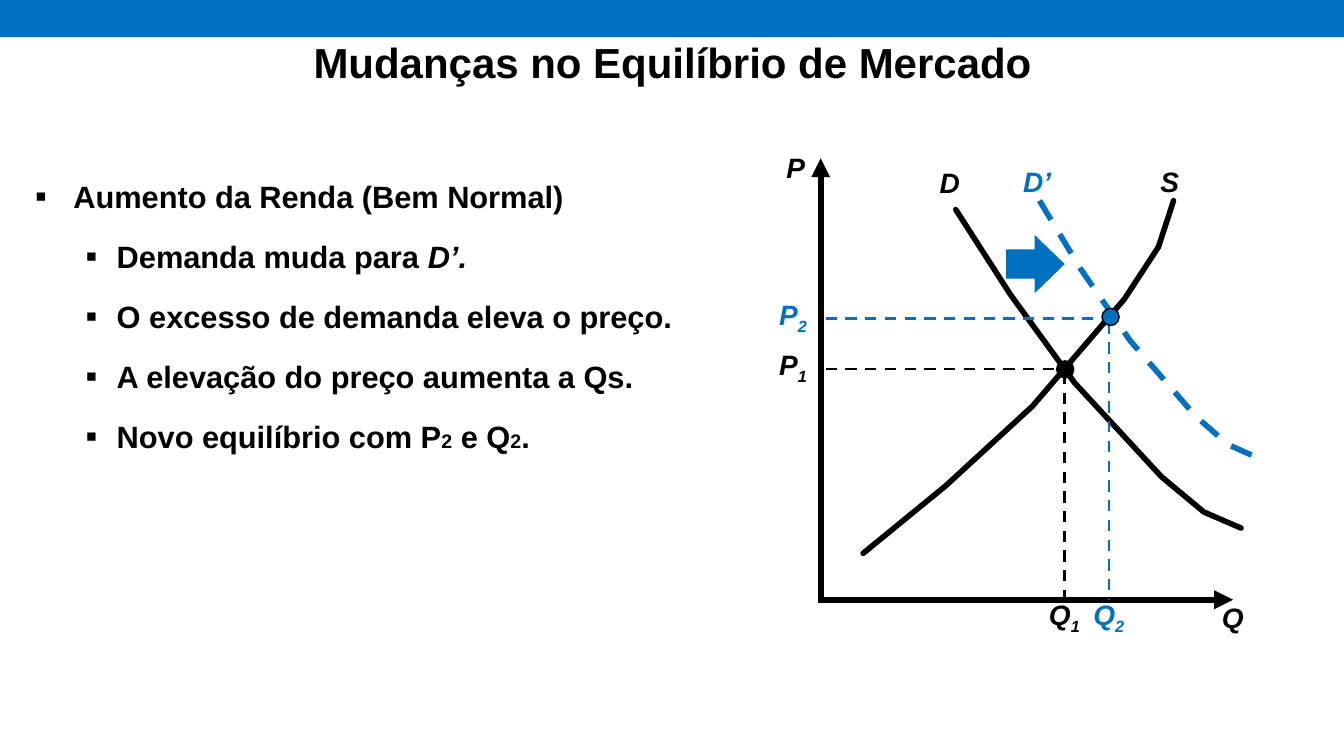
from dataclasses import dataclass

from lxml import etree
from pptx import Presentation
from pptx import util as u
from pptx.dml.color import RGBColor
from pptx.enum import dml, shapes, text
from pptx.oxml import ns


@dataclass(frozen=True)
class Theme:
    """Colours, font and type sizes of the slide."""
    ink: RGBColor = RGBColor(0, 0, 0)
    accent: RGBColor = RGBColor(0x00, 0x70, 0xC0)
    font: str = "Arial"
    title: int = 30
    body: int = 22
    index: int = 14
    label: int = 20


THEME = Theme()
COLUMNS, ROWS = 133.3, 75
MODULE = u.Inches(0.1)

DEMAND = [(18.8, 6.8), (24.2, 15.2), (30.6, 24), (39.2, 33.3), (43.4, 36.8), (47.1, 38.4)]
NEW_DEMAND = [(27.1, 5.9), (31.2, 12.7), (36.1, 19.8), (42.6, 27.3), (45.8, 30.1), (48.7, 31.4)]
SUPPLY = [(9.6, 40.9), (17.8, 34.2), (26.4, 26.3), (35.5, 15.7), (38.9, 10.5), (40.4, 5.9)]

BULLETS = [
    (0, [("Aumento da Renda (Bem Normal)", {})]),
    (1, [("Demanda muda para ", {}), ("D’.", {"italic": True})]),
    (1, [("O excesso de demanda eleva o preço.", {})]),
    (1, [("A elevação do preço aumenta a Qs.", {})]),
    (1, [("Novo equilíbrio com P", {}), ("2", {"size": THEME.index}), (" e Q", {}),
         ("2", {"size": THEME.index}), (".", {})]),
]


def grid(*lengths):
    """Turn grid modules into slide lengths."""
    return [u.Emu(round(length * MODULE)) for length in lengths]


def element(parent, tag, **attributes):
    """Append a drawing element with attributes."""
    return etree.SubElement(parent, ns.qn(tag), attributes)


def write(para, words, size=THEME.body, color=THEME.ink, italic=False, baseline=None):
    """Add one formatted span to a paragraph."""
    span = para.add_run()
    span.text = words
    span.font.name, span.font.size, span.font.bold = THEME.font, u.Pt(size), True
    span.font.italic = italic
    span.font.color.rgb = color
    if baseline:
        span.font._element.set("baseline", str(baseline))


def stroke(line, color, width, dashed=False):
    """Set colour, width and dash of a line."""
    line.color.rgb = color
    line.width = u.Pt(width)
    if dashed:
        line.dash_style = dml.MSO_LINE.DASH


def add_shape(page, kind, box, fill):
    """Place a flat preset shape without outline."""
    shape = page.shapes.add_shape(kind, *grid(*box))
    shape.shadow.inherit = False
    shape.fill.solid()
    shape.fill.fore_color.rgb = fill
    shape.line.fill.background()
    return shape


def add_line(page, origin, start, end, color, width, dashed=False, arrow=False):
    """Draw a straight line within the chart."""
    left, top = origin
    line = page.shapes.add_connector(
        shapes.MSO_CONNECTOR.STRAIGHT,
        *grid(left + start[0], top + start[1], left + end[0], top + end[1]))
    stroke(line.line, color, width, dashed)
    if arrow:
        element(line.line._get_or_add_ln(), "a:tailEnd", type="triangle")
    element(line._element.spPr, "a:effectLst")


def add_curve(page, origin, points, color, dashed=False):
    """Draw an open curve through the points."""
    places = [grid(origin[0] + x, origin[1] + y) for x, y in points]
    builder = page.shapes.build_freeform(*places[0])
    builder.add_line_segments(places[1:], close=False)
    curve = builder.convert_to_shape()
    curve.shadow.inherit = False
    curve.fill.background()
    stroke(curve.line, color, 4, dashed)
    if not dashed:
        curve.line._get_or_add_ln().set("cap", "rnd")


def add_label(page, origin, place, width, letter, color=THEME.ink, index=None):
    """Write a chart label with an optional subscript."""
    box = page.shapes.add_textbox(*grid(origin[0] + place[0], origin[1] + place[1], width, 4.3))
    box.text_frame.word_wrap = False
    para = box.text_frame.paragraphs[0]
    write(para, letter, THEME.label, color, True)
    if index:
        write(para, index, THEME.label, color, True, -25000)


def add_equilibrium(page, origin, guide, dot, color, index):
    """Mark an equilibrium with guides, dot, price and quantity."""
    x, y = guide
    add_line(page, origin, (5.9, y), (x - 0.6, y), color, 2, dashed=True)
    add_line(page, origin, (x, y + 0.4), (x, 45.5), color, 2, dashed=True)
    add_label(page, origin, (x - 2.55, 44.8), 5.2, "Q", color, index)
    add_label(page, origin, (0.3, y - 2.6), 4.9, "P", color, index)
    marker = add_shape(page, shapes.MSO_SHAPE.OVAL,
                       (origin[0] + dot[0] - 0.85, origin[1] + dot[1] - 0.85, 1.7, 1.7), color)
    stroke(marker.line, THEME.ink, 1)


def add_market(page, origin):
    """Draw the supply and demand chart."""
    add_curve(page, origin, NEW_DEMAND, THEME.accent, dashed=True)
    arrow = add_shape(page, shapes.MSO_SHAPE.RIGHT_ARROW,
                      (origin[0] + 23.8, origin[1] + 9.3, 5.8, 5.8), THEME.accent)
    arrow.adjustments[1] = 0.515
    for points in (DEMAND, SUPPLY):
        add_curve(page, origin, points, THEME.ink)
    add_line(page, origin, (5.4, 45.8), (5.4, 1.7), THEME.ink, 4.5, arrow=True)
    add_line(page, origin, (5.5, 45.5), (46.3, 45.5), THEME.ink, 4.5, arrow=True)
    add_label(page, origin, (24.5, 1.8), 4.8, "D’", THEME.accent)
    for letter, place, width in (("D", (16.2, 1.9), 4), ("S", (38.1, 1.8), 3.9),
                                 ("P", (1, 0.4), 3.9), ("Q", (44.2, 45.1), 4.2)):
        add_label(page, origin, place, width, letter)
    add_equilibrium(page, origin, (34, 17.6), (34.15, 17.45), THEME.accent, "2")
    add_equilibrium(page, origin, (29.6, 22.6), (29.65, 22.65), THEME.ink, "1")


def add_bullets(page, box):
    """Write the two-level bullet list."""
    frame = page.shapes.add_textbox(*grid(*box)).text_frame
    frame.word_wrap = True
    for number, (level, spans) in enumerate(BULLETS):
        para = frame.add_paragraph() if number else frame.paragraphs[0]
        para.level = level
        if number:
            para.space_before = u.Pt(16.5)
        margin, indent = grid(*((8.1, -3.1) if level else (3.8, -3.8)))
        properties = para._p.get_or_add_pPr()
        properties.set("marL", str(margin))
        properties.set("indent", str(indent))
        element(properties, "a:buSzPct", val="108000")
        element(properties, "a:buFont", typeface=THEME.font)
        element(properties, "a:buChar", char="▪")
        for words, style in spans:
            write(para, words, **style)


def add_heading(page, box):
    """Place the top band and the slide title."""
    add_shape(page, shapes.MSO_SHAPE.RECTANGLE, (0, -0.3, COLUMNS, 4), THEME.accent)
    title = page.shapes.title
    title.left, title.top, title.width, title.height = grid(*box)
    frame = title.text_frame
    frame.auto_size = text.MSO_AUTO_SIZE.NONE
    frame.vertical_anchor = text.MSO_ANCHOR.BOTTOM
    para = frame.paragraphs[0]
    para.alignment = text.PP_ALIGN.CENTER
    write(para, "Mudanças no Equilíbrio de Mercado", THEME.title)


def main():
    """Build and save the deck."""
    deck = Presentation()
    deck.slide_width, deck.slide_height = grid(COLUMNS, ROWS)
    page = deck.slides.add_slide(deck.slide_layouts[5])
    add_heading(page, (20, 1.2, 93.5, 7.9))
    add_bullets(page, (2.5, 17.1, 72.7, 39))
    add_market(page, (76, 14))
    deck.save("out.pptx")


if __name__ == "__main__":
    main()
